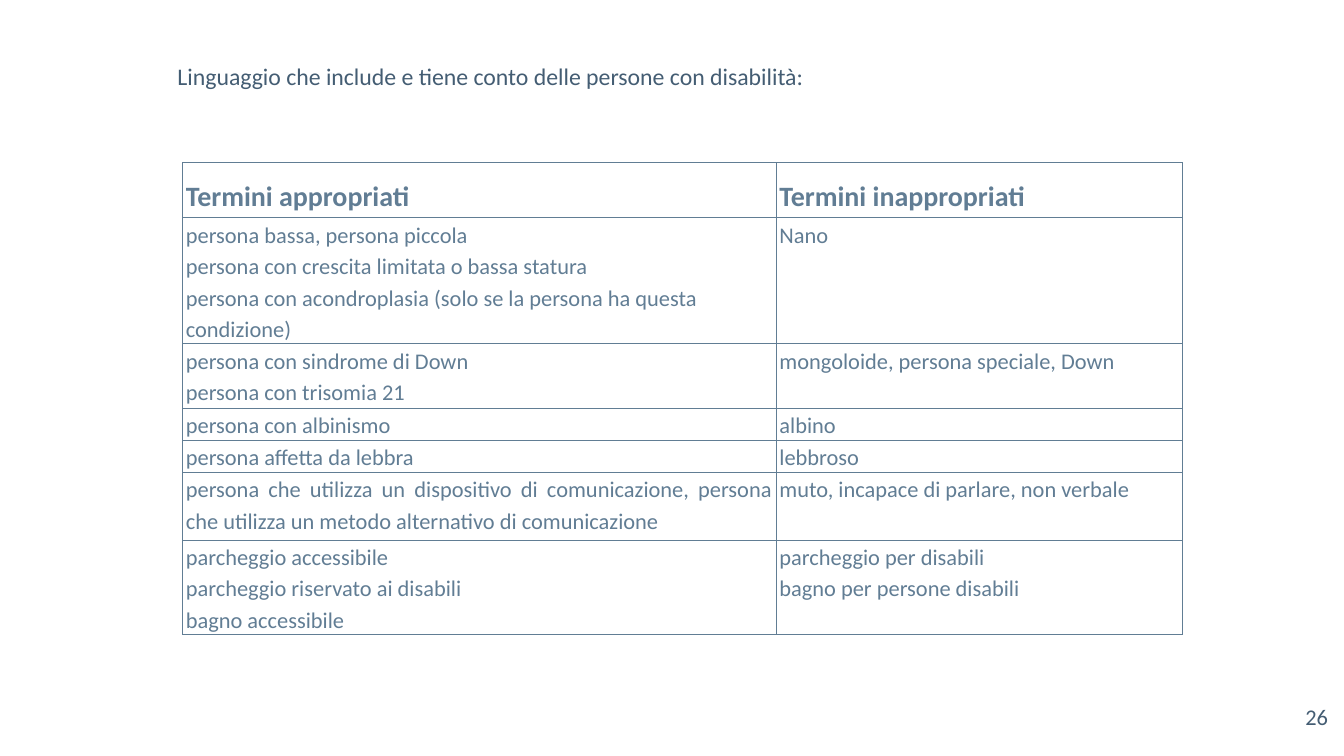
import pptx
import pptx.util
import pptx.dml.color
import pptx.enum.text
import pptx.oxml.ns
from lxml import etree

Pt = pptx.util.Pt
ALIGN = pptx.enum.text.PP_ALIGN
RGBColor = pptx.dml.color.RGBColor

FONT = "Calibri"
SLATE = RGBColor(0x61, 0x7D, 0x94)
NAVY = RGBColor(0x44, 0x5D, 0x73)

INTRODUCTION = "Linguaggio che include e tiene conto delle persone con disabilità:"
PAGE_NUMBER = "26"
COLUMN_WIDTHS = [848, 580]
ROWS = [
    (78.5, ["Termini appropriati"], ["Termini inappropriati"]),
    (128, ["persona bassa, persona piccola",
           "persona con crescita limitata o bassa statura",
           "persona con acondroplasia (solo se la persona ha questa condizione)"],
     ["Nano"]),
    (92, ["persona con sindrome di Down", "persona con trisomia 21"],
     ["mongoloide, persona speciale, Down"]),
    (46, ["persona con albinismo"], ["albino"]),
    (46, ["persona affetta da lebbra"], ["lebbroso"]),
    (96.5, ["persona che utilizza un dispositivo di comunicazione, "
            "persona che utilizza un metodo alternativo di comunicazione"],
     ["muto, incapace di parlare, non verbale"]),
    (129, ["parcheggio accessibile", "parcheggio riservato ai disabili", "bagno accessibile"],
     ["parcheggio per disabili", "bagno per persone disabili"]),
]


def write_lines(frame, lines, size, color, alignment, spacing, bold=False):
    for index, line in enumerate(lines):
        paragraph = frame.paragraphs[0] if index == 0 else frame.add_paragraph()
        paragraph.alignment = alignment
        paragraph.line_spacing = spacing
        run = paragraph.add_run()
        run.text = line
        run.font.name = FONT
        run.font.size = Pt(size)
        run.font.bold = bold
        run.font.color.rgb = color


def add_text(slide, position, insets, text, size, alignment, spacing):
    box = slide.shapes.add_textbox(*[Pt(value) for value in position])
    frame = box.text_frame
    frame.word_wrap = True
    frame.margin_left = frame.margin_right = Pt(insets[0])
    frame.margin_top = frame.margin_bottom = Pt(insets[1])
    write_lines(frame, [text], size, NAVY, alignment, spacing)


def add_borders(cell):
    properties = cell._tc.get_or_add_tcPr()
    qn = pptx.oxml.ns.qn
    for index, side in enumerate(("lnL", "lnR", "lnT", "lnB")):
        line = etree.Element(qn("a:" + side), w=str(Pt(1)))
        fill = etree.SubElement(line, qn("a:solidFill"))
        etree.SubElement(fill, qn("a:srgbClr"), val=str(SLATE))
        properties.insert(index, line)


def add_terms_table(slide):
    heights = [row[0] for row in ROWS]
    frame = slide.shapes.add_table(len(ROWS), len(COLUMN_WIDTHS), Pt(260.5), Pt(232.5),
                                   Pt(sum(COLUMN_WIDTHS)), Pt(sum(heights)))
    table = frame.table
    table.first_row = table.horz_banding = False
    for column, width in zip(table.columns, COLUMN_WIDTHS):
        column.width = Pt(width)
    for row_index, (height, *terms) in enumerate(ROWS):
        table.rows[row_index].height = Pt(height)
        header = row_index == 0
        for column_index, lines in enumerate(terms):
            cell = table.cell(row_index, column_index)
            cell.margin_left = cell.margin_right = Pt(5)
            cell.margin_top = cell.margin_bottom = 0
            cell.fill.background()
            add_borders(cell)
            alignment = ALIGN.JUSTIFY if len(lines) == 1 else ALIGN.LEFT
            write_lines(cell.text_frame, lines, 40 if header else 32, SLATE,
                        alignment, 1.5 if header else 1.15, header)


def main():
    presentation = pptx.Presentation()
    presentation.slide_width = Pt(1920)
    presentation.slide_height = Pt(1080)
    slide = presentation.slides.add_slide(presentation.slide_layouts[6])
    add_terms_table(slide)
    add_text(slide, (249, 77, 1566, 59), (4.5, 4.5), INTRODUCTION, 34, ALIGN.LEFT, 1.15)
    add_text(slide, (1796.5, 997, 115, 83), (14.4, 7.2), PAGE_NUMBER, 32, ALIGN.RIGHT, 1.0)
    presentation.save("out.pptx")


if __name__ == "__main__":
    main()
